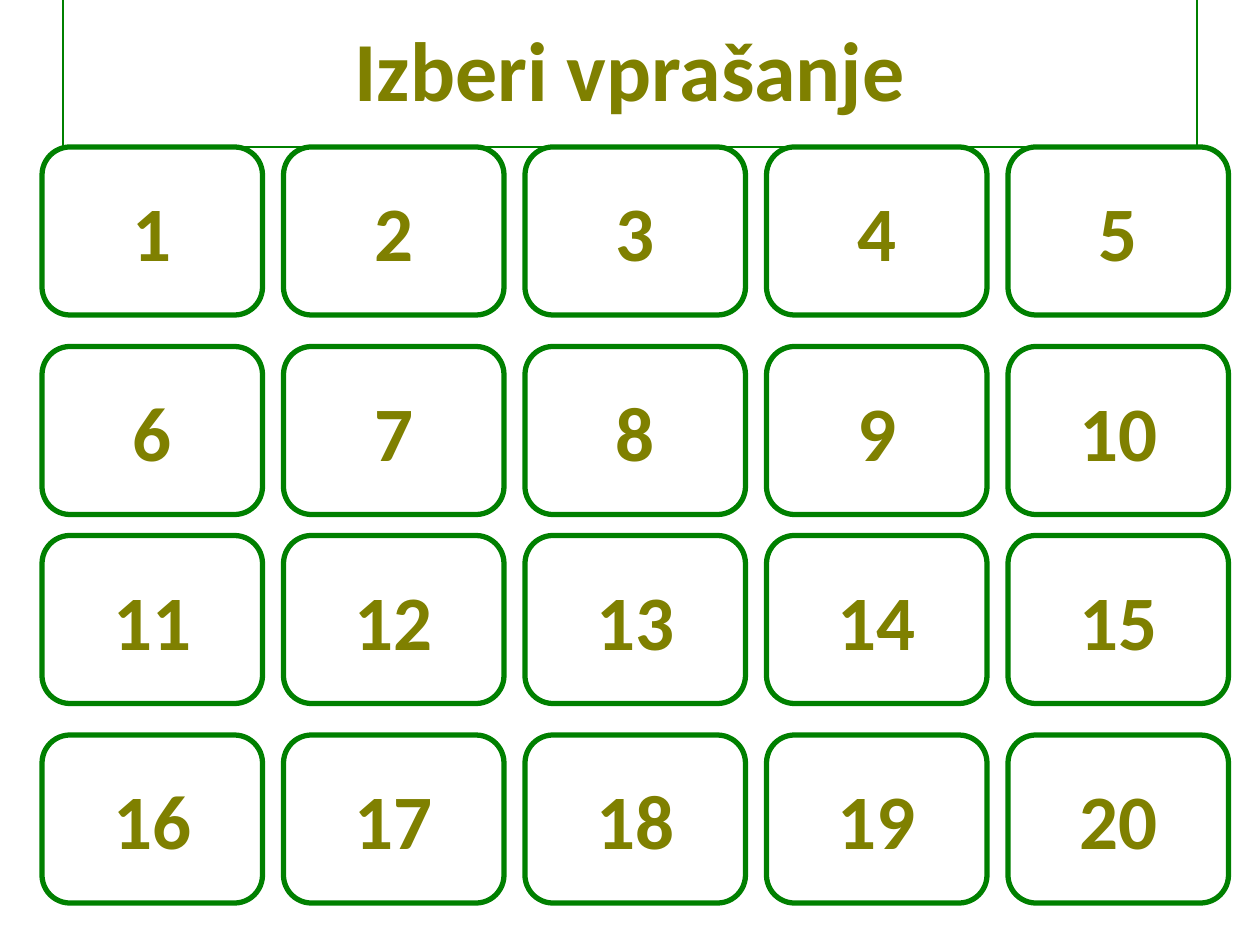
import pptx
import pptx.util
import pptx.dml.color
import pptx.enum.shapes
import pptx.enum.text

TITLE = "Izberi vprašanje"
QUESTION_COUNT = 20
COLUMNS = 5
GREEN, OLIVE = "008000", "7F8000"

# Layout in grid units of one twelfth of an inch
UNIT = pptx.util.Inches(1) // 12
TITLE_AREA = (6, -1, 108, 15)
FIRST_LEFT, COLUMN_STEP = 4, 23
ROW_TOPS = (14, 33, 51, 70)
CARD_WIDTH, CARD_HEIGHT = 21, 16


def color(hex_code):
    return pptx.dml.color.RGBColor.from_string(hex_code)


def place(shape, area):
    shape.left, shape.top, shape.width, shape.height = (
        length * UNIT for length in area)


def style(shape, text, size, line_width, wrap):
    shape.fill.background()
    shape.line.color.rgb = color(GREEN)
    shape.line.width = pptx.util.Pt(line_width)
    frame = shape.text_frame
    frame.text = text
    frame.word_wrap = wrap
    frame.auto_size = pptx.enum.text.MSO_AUTO_SIZE.NONE
    frame.vertical_anchor = pptx.enum.text.MSO_ANCHOR.MIDDLE
    paragraph = frame.paragraphs[0]
    paragraph.alignment = pptx.enum.text.PP_ALIGN.CENTER
    paragraph.font.name = "Calibri"
    paragraph.font.size = pptx.util.Pt(size)
    paragraph.font.bold = True
    paragraph.font.color.rgb = color(OLIVE)


def add_card(slide, number):
    row, column = divmod(number - 1, COLUMNS)
    card = slide.shapes.add_shape(
        pptx.enum.shapes.MSO_SHAPE.ROUNDED_RECTANGLE, 0, 0, 0, 0)
    place(card, (FIRST_LEFT + column * COLUMN_STEP, ROW_TOPS[row],
                 CARD_WIDTH, CARD_HEIGHT))
    card.shadow.inherit = False
    style(card, str(number), 44, 3, False)


def main():
    deck = pptx.Presentation()
    deck.slide_width = pptx.util.Inches(10)
    deck.slide_height = pptx.util.Inches(7.5)
    slide = deck.slides.add_slide(deck.slide_layouts.get_by_name("Title Only"))
    place(slide.shapes.title, TITLE_AREA)
    style(slide.shapes.title, TITLE, 48, 0.75, True)
    for number in range(1, QUESTION_COUNT + 1):
        add_card(slide, number)
    deck.save("out.pptx")


if __name__ == "__main__":
    main()
